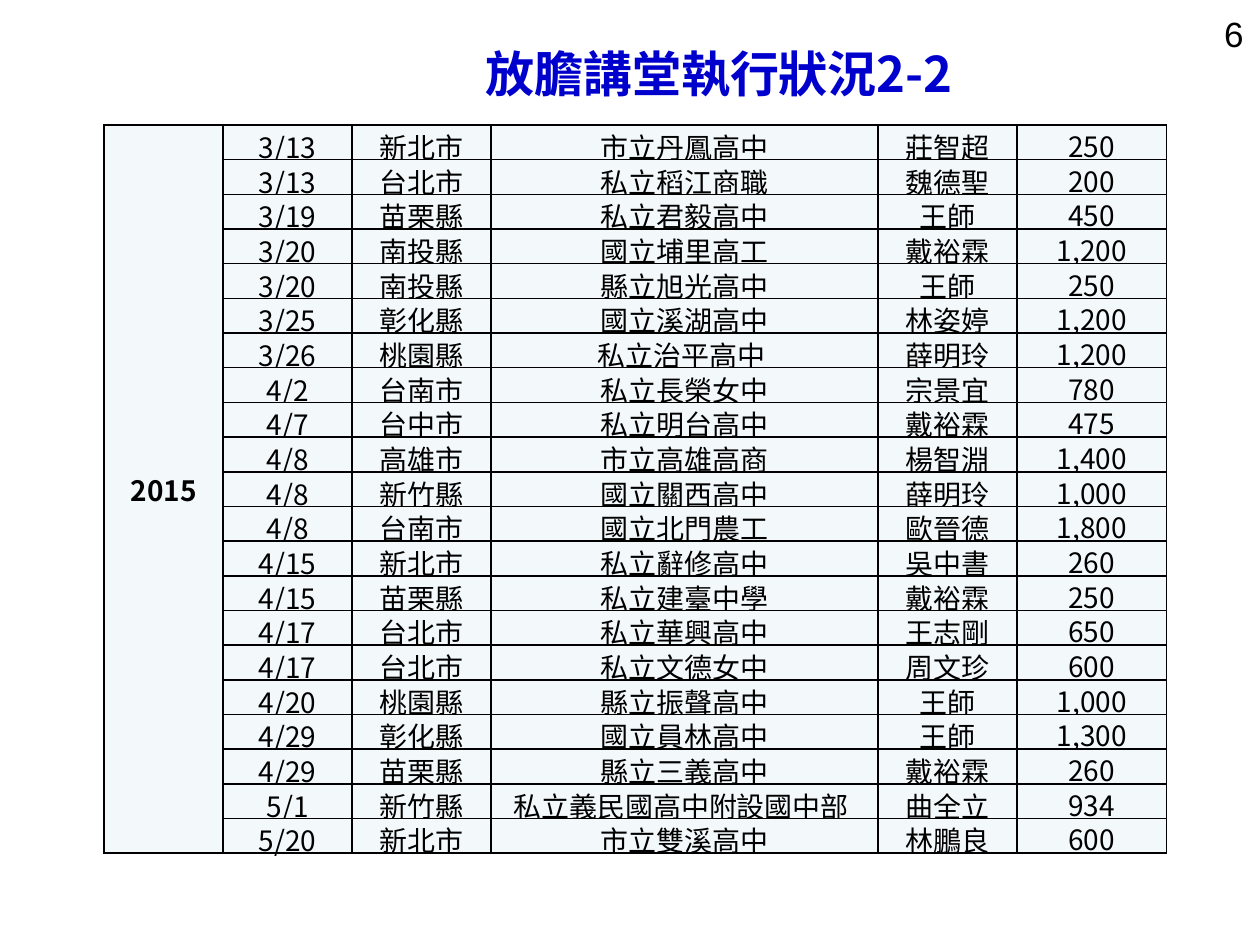
import pptx
import pptx.dml.color
import pptx.enum.text
import pptx.oxml
import pptx.util
from pptx.util import Cm

FONT = "Noto Sans CJK SC"
BORDER = (
    '<a:{side} xmlns:a="http://schemas.openxmlformats.org/drawingml/2006/main" w="12700">'
    '<a:solidFill><a:srgbClr val="000000"/></a:solidFill></a:{side}>'
)
CENTER = pptx.enum.text.PP_ALIGN.CENTER
MIDDLE = pptx.enum.text.MSO_ANCHOR.MIDDLE


def color(value):
    return pptx.dml.color.RGBColor.from_string(value)


def add_span(para, text, size, font, fill, bold=False):
    """Add one formatted run, with the same font for Latin and Chinese text."""
    span = para.add_run()
    span.text = text
    span.font.size = pptx.util.Pt(size)
    span.font.bold = bold
    span.font.color.rgb = color(fill)
    span.font.name = font
    east_asian = pptx.oxml.parse_xml(
        '<a:ea xmlns:a="http://schemas.openxmlformats.org/drawingml/2006/main" '
        f'typeface="{font}"/>'
    )
    span.font._element.append(east_asian)


lectures = [
    ("3/13", "新北市", "市立丹鳳高中", "莊智超", "250"),
    ("3/13", "台北市", "私立稻江商職", "魏德聖", "200"),
    ("3/19", "苗栗縣", "私立君毅高中", "王師", "450"),
    ("3/20", "南投縣", "國立埔里高工", "戴裕霖", "1,200"),
    ("3/20", "南投縣", "縣立旭光高中", "王師", "250"),
    ("3/25", "彰化縣", "國立溪湖高中", "林姿婷", "1,200"),
    ("3/26", "桃園縣", "私立治平高中 ", "薛明玲", "1,200"),
    ("4/2", "台南市", "私立長榮女中", "宗景宜", "780"),
    ("4/7", "台中市", "私立明台高中", "戴裕霖", "475"),
    ("4/8", "高雄市", "市立高雄高商", "楊智淵", "1,400"),
    ("4/8", "新竹縣", "國立關西高中", "薛明玲", "1,000"),
    ("4/8", "台南市", "國立北門農工", "歐晉德", "1,800"),
    ("4/15", "新北市", "私立辭修高中", "吳中書", "260"),
    ("4/15", "苗栗縣", "私立建臺中學", "戴裕霖", "250"),
    ("4/17", "台北市", "私立華興高中", "王志剛", "650"),
    ("4/17", "台北市", "私立文德女中", "周文珍", "600"),
    ("4/20", "桃園縣", "縣立振聲高中", "王師", "1,000"),
    ("4/29", "彰化縣", "國立員林高中", "王師", "1,300"),
    ("4/29", "苗栗縣", "縣立三義高中", "戴裕霖", "260"),
    ("5/1", "新竹縣", "私立義民國高中附設國中部 ", "曲全立", "934"),
    ("5/20", "新北市", "市立雙溪高中", "林鵬良", "600"),
]
column_widths = [2.4, 2.6, 2.8, 7.8, 2.8, 3.02]
row_height = 0.7

deck = pptx.Presentation()
deck.slide_width, deck.slide_height = Cm(25.4), Cm(19.05)
page = deck.slides.add_slide(deck.slide_layouts[5])

# Page number
box = page.shapes.add_textbox(Cm(23.92), Cm(0.13), Cm(1.4), Cm(1.11))
box.text_frame.word_wrap = False
para = box.text_frame.paragraphs[0]
para.alignment = pptx.enum.text.PP_ALIGN.RIGHT
add_span(para, "6", 20, "Arial", "000000")

# Lecture table, with the year merged down the first column
table = page.shapes.add_table(
    len(lectures), len(column_widths), Cm(2.1), Cm(2.52),
    Cm(sum(column_widths)), Cm(row_height * len(lectures)),
).table
for column, width in zip(table.columns, column_widths):
    column.width = Cm(width)
for row in table.rows:
    row.height = Cm(row_height)
table.cell(0, 0).merge(table.cell(len(lectures) - 1, 0))

for row_index, lecture in enumerate(lectures):
    year = "2015" if row_index == 0 else ""
    for column_index, text in enumerate((year, *lecture)):
        cell = table.cell(row_index, column_index)
        inset = Cm(0) if column_index == len(lecture) else Cm(0.02)
        cell.margin_left = cell.margin_right = cell.margin_top = inset
        cell.margin_bottom = Cm(0)
        cell.vertical_anchor = MIDDLE
        properties = cell._tc.get_or_add_tcPr()
        for side in ("lnL", "lnR", "lnT", "lnB"):
            properties.append(pptx.oxml.parse_xml(BORDER.format(side=side)))
        cell.fill.solid()
        cell.fill.fore_color.rgb = color("F3F9FA")
        if text:
            para = cell.text_frame.paragraphs[0]
            para.alignment = CENTER
            add_span(para, text, 16, FONT, "000000", bold=column_index == 0)

# Title
title = page.shapes.title
title.left, title.top, title.width, title.height = Cm(7.7), Cm(0.91), Cm(13.59), Cm(1.12)
title.text_frame.vertical_anchor = MIDDLE
para = title.text_frame.paragraphs[0]
para.alignment = CENTER
add_span(para, "放膽講堂執行狀況2-2", 28, FONT, "0000CC", bold=True)

deck.save("out.pptx")
